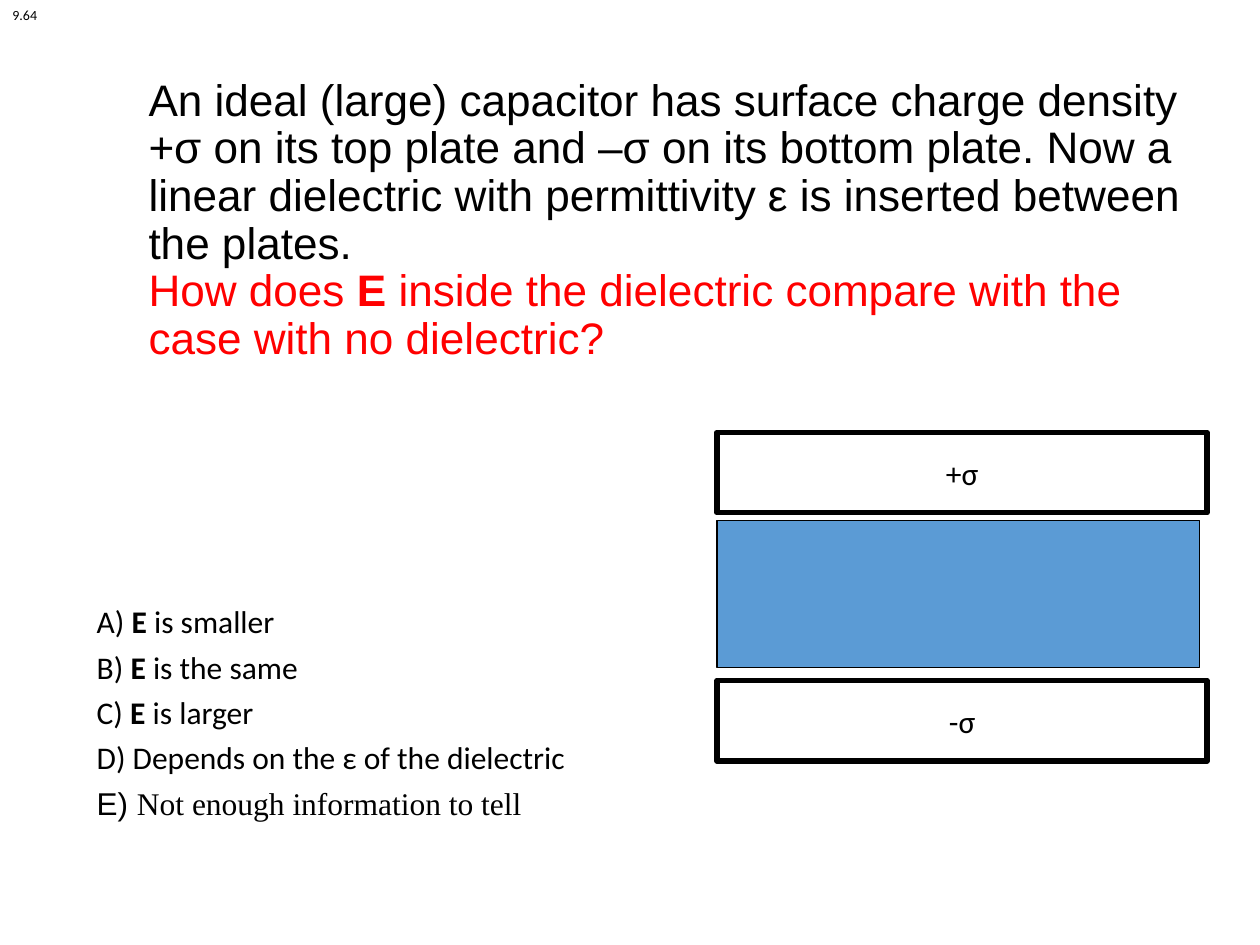
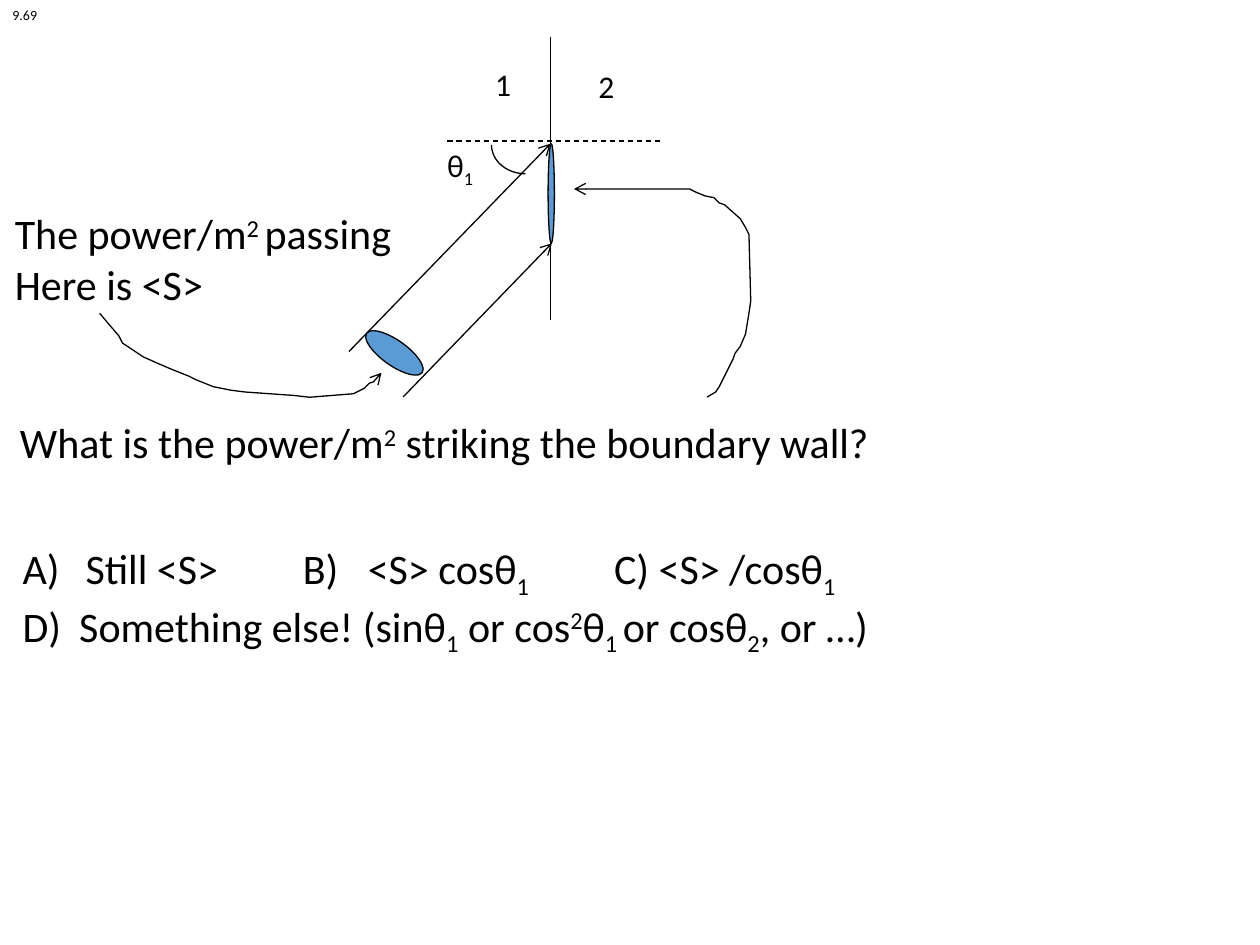
from lxml.etree import SubElement
from pptx import Presentation
from pptx.dml.color import RGBColor
from pptx.enum.dml import MSO_LINE
from pptx.enum.shapes import MSO_CONNECTOR, MSO_SHAPE
from pptx.enum.text import MSO_ANCHOR, MSO_AUTO_SIZE, PP_ALIGN
from pptx.oxml.ns import qn
from pptx.util import Pt

COLORS = {"text": "000000", "question": "FF0000", "body": "5B9BD5", "plate": "FFFFFF"}
BASELINES = {"super": "30000", "sub": "-25000"}
THIN = 0.75


def add_text(slide, box, paragraphs, size, font="Calibri", wrap=True):
    shape = slide.shapes.add_textbox(*[Pt(length) for length in box])
    text_frame = shape.text_frame
    text_frame.word_wrap = wrap
    if not wrap:
        text_frame.auto_size = MSO_AUTO_SIZE.SHAPE_TO_FIT_TEXT
    for index, runs in enumerate(paragraphs):
        paragraph = text_frame.add_paragraph() if index else text_frame.paragraphs[0]
        for text, style in runs:
            run = paragraph.add_run()
            run.text = text
            run.font.size = Pt(size)
            run.font.name = font
            run.font.color.rgb = RGBColor.from_string(COLORS["text"])
            if style == "bold":
                run.font.bold = True
            elif style:
                run.font._element.set("baseline", BASELINES[style])
    return text_frame


def style_shape(shape, fill, width=THIN, arrow=False):
    shape.shadow.inherit = False
    if fill:
        shape.fill.solid()
        shape.fill.fore_color.rgb = RGBColor.from_string(COLORS[fill])
    else:
        shape.fill.background()
    shape.line.color.rgb = RGBColor.from_string(COLORS["text"])
    shape.line.width = Pt(width)
    if arrow:
        SubElement(shape.line._get_or_add_ln(), qn("a:tailEnd"), type="arrow")


presentation = Presentation()
presentation.slide_width = Pt(720)
presentation.slide_height = Pt(540)
blank_layout = presentation.slide_layouts[6]
capacitor_slide, power_slide = [presentation.slides.add_slide(blank_layout) for _ in range(2)]

for slide, number in ((capacitor_slide, "9.64"), (power_slide, "9.69")):
    add_text(slide, (0, 0, 28.8, 17.3), [[(number, "")]], 8, wrap=False)

problem = add_text(
    capacitor_slide,
    (77.8, 33.1, 623.5, 213.8),
    [
        [("An ideal (large) capacitor has surface charge density +σ on its top plate "
          "and –σ on its bottom plate. Now a linear dielectric with permittivity ε "
          "is inserted between the plates.", "")],
        [("How does ", ""), ("E", "bold"),
         (" inside the dielectric compare with the case with no dielectric?", "")],
    ],
    25.2,
    "Arial",
)
problem.vertical_anchor = MSO_ANCHOR.MIDDLE
problem.margin_bottom = Pt(31)
for paragraph in problem.paragraphs:
    paragraph.line_spacing = 0.9
for run in problem.paragraphs[1].runs:
    run.font.color.rgb = RGBColor.from_string(COLORS["question"])

answers = add_text(
    capacitor_slide,
    (48.2, 340.6, 418.3, 133.2),
    [
        [("A) ", ""), ("E ", "bold"), ("is smaller", "")],
        [("B) ", ""), ("E", "bold"), (" is the same", "")],
        [("C) ", ""), ("E", "bold"), (" is larger", "")],
        [("D) Depends on the ε of the dielectric", "")],
        [("Ε) ", ""), ("Not enough information to tell", "")],
    ],
    18,
)
for paragraph in answers.paragraphs[1:]:
    paragraph.line_spacing = 1.2
for run, font in zip(answers.paragraphs[-1].runs, ("Arial", "Times New Roman")):
    run.font.name = font

dielectric = capacitor_slide.shapes.add_shape(
    MSO_SHAPE.RECTANGLE, Pt(409.7), Pt(297.4), Pt(275.8), Pt(84.2))
style_shape(dielectric, "body")

for top, charge in ((247, "+σ"), (388.8, "-σ")):
    plate = capacitor_slide.shapes.add_shape(
        MSO_SHAPE.RECTANGLE, Pt(409.7), Pt(top), Pt(280.1), Pt(46.1))
    style_shape(plate, "plate", 3)
    plate.text_frame.text = charge
    plate.text_frame.word_wrap = False
    plate.text_frame.vertical_anchor = MSO_ANCHOR.MIDDLE
    paragraph = plate.text_frame.paragraphs[0]
    paragraph.alignment = PP_ALIGN.CENTER
    paragraph.font.size = Pt(18)
    paragraph.font.name = "Calibri"
    paragraph.font.color.rgb = RGBColor.from_string(COLORS["text"])

add_text(
    power_slide,
    (4.3, 234.7, 691.9, 36),
    [[("What is the power/m", ""), ("2", "super"), (" striking the boundary wall?", "")]],
    24,
)
choices = add_text(
    power_slide,
    (5.8, 306.7, 693.4, 87.1),
    [
        [("A)\tStill <S>\tB)\t<S> cosθ", ""), ("1", "sub"),
         ("\tC) <S> /cosθ", ""), ("1", "sub")],
        [("D)\tSomething else! (sinθ", ""), ("1", "sub"), (" or cos", ""), ("2", "super"),
         ("θ", ""), ("1 ", "sub"), ("or cosθ", ""), ("2", "sub"), (", or …)", "")],
    ],
    24,
)
for paragraph, stops in zip(choices.paragraphs, ((36, 160.2, 197.3, 338), (32.4,))):
    tab_list = SubElement(paragraph._p.get_or_add_pPr(), qn("a:tabLst"))
    for stop in stops:
        SubElement(tab_list, qn("a:tab"), pos=str(Pt(stop)), algn="l")

add_text(
    power_slide,
    (1.4, 115.2, 254.9, 65.5),
    [[("The power/m", ""), ("2 ", "super"), ("passing", "")], [("Here is <S>", "")]],
    24,
)
for region, left, top in (("1", 275.8, 33.8), ("2", 334.8, 34.6)):
    add_text(power_slide, (left, top, 24.5, 28.8), [[(region, "")]], 18, wrap=False)
add_text(power_slide, (248.4, 79.9, 35.3, 28.8), [[("θ", ""), ("1", "sub")]], 18)

for ends, kind in (
    ((314.6, 20.9, 314.6, 182.9), "boundary"),
    ((377.3, 80.6, 254.2, 80.6), "normal"),
    ((199.4, 200.9, 314.6, 82.1), "ray"),
    ((230.4, 226.8, 315.4, 139), "ray"),
):
    line = power_slide.shapes.add_connector(
        MSO_CONNECTOR.STRAIGHT, *[Pt(length) for length in ends])
    line.line.color.rgb = RGBColor.from_string(COLORS["text"])
    line.line.width = Pt(THIN)
    if kind == "normal":
        line.line.dash_style = MSO_LINE.DASH
    if kind == "ray":
        SubElement(line.line._get_or_add_ln(), qn("a:tailEnd"), type="arrow")
    SubElement(line._element.spPr, qn("a:effectLst"))

for preset, box, rotation, fill in (
    (MSO_SHAPE.ARC, (280.8, 66.2, 38.9, 33.1), 180, None),
    (MSO_SHAPE.OVAL, (218.2, 182.2, 14.4, 38.9), 305.3, "body"),
    (MSO_SHAPE.OVAL, (313.2, 82.1, 3.6, 56.9), 0, "body"),
):
    shape = power_slide.shapes.add_shape(preset, *[Pt(length) for length in box])
    shape.rotation = rotation
    style_shape(shape, fill)

beam_pointer = [
    (57, 179), (62, 185), (68, 192), (70, 196), (73, 198), (79, 202), (82, 204),
    (91, 208), (98, 211), (108, 215), (112, 217), (122, 221), (132, 223), (140, 224),
    (168, 226), (177, 227), (202, 225), (208, 222), (211, 219), (214, 218), (218, 213),
]
wall_pointer = [
    (404, 227), (409, 224), (411, 221), (415, 213), (419, 205), (420, 202), (423, 198),
    (426, 191), (428, 179), (429, 172), (428, 134), (426, 130), (423, 125), (414, 117),
    (411, 116), (408, 113), (403, 112), (398, 110), (394, 108), (328, 108),
]
for points in (beam_pointer, wall_pointer):
    start, *rest = [(Pt(x), Pt(y)) for x, y in points]
    builder = power_slide.shapes.build_freeform(*start)
    builder.add_line_segments(rest, close=False)
    style_shape(builder.convert_to_shape(), None, arrow=True)

presentation.save("out.pptx")
